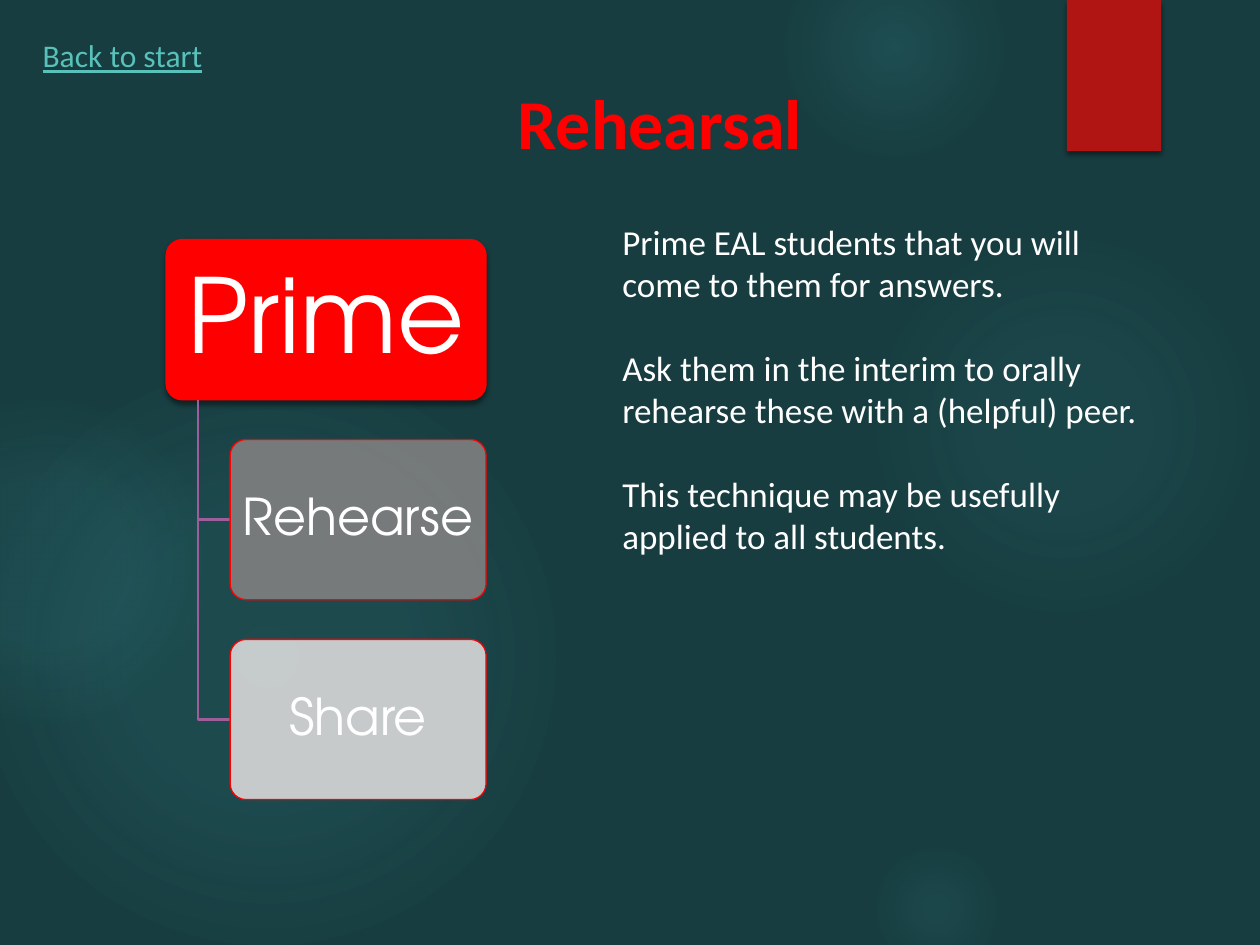
from dataclasses import dataclass

from lxml.etree import SubElement
from pptx import Presentation
from pptx.dml.color import RGBColor
from pptx.enum.shapes import MSO_SHAPE
from pptx.enum.text import MSO_ANCHOR, MSO_AUTO_SIZE, PP_ALIGN
from pptx.oxml import parse_xml
from pptx.oxml.ns import nsdecls, qn
from pptx.util import Cm, Pt

HUES = {
    "back": "173D40", "glow": "50B9C1", "tab": "B01513", "red": "FF0000",
    "white": "FFFFFF", "link": "58C1BA", "stem": "9E5E9B",
    "grey": "808080", "pale": "D9D9D9", "black": "000000",
}
BODY = [
    "Prime EAL students that you will come to them for answers.",
    "Ask them in the interim to orally rehearse these with a (helpful) peer.",
    "This technique may be usefully applied to all students.",
]


@dataclass
class Glow:
    left: float
    top: float
    size: float
    stops: tuple  # (position, opacity) in percent


@dataclass
class Step:
    text: str
    fill: str
    size: int
    alpha: int = 100
    raised: bool = False


GLOWS = [
    Glow(17.5, 4.65, 7.82, ((0, 7), (36, 6), (69, 0))),
    Glow(15.8, -1.27, 4.45, ((0, 14), (36, 7), (73, 0))),
    Glow(17.5, 16.94, 2.74, ((0, 9), (36, 5), (66, 0))),
    Glow(-0.43, 7.42, 11.63, ((0, 11), (36, 10), (75, 0))),
    Glow(-2.34, 8.05, 6.55, ((0, 8), (36, 8), (72, 0))),
]
STEPS = [Step("Prime", "red", 59, raised=True), Step("Rehearse", "grey", 29, 90),
         Step("Share", "pale", 29, 90)]

# Step chart grid, in cm
LEFT, TOP, WIDE, HIGH, PITCH = 3.35, 4.83, 6.45, 3.23, 4.03
INDENT, STEM = WIDE / 5, LEFT + WIDE / 10


def hue(name: str) -> RGBColor:
    return RGBColor.from_string(HUES[name])


def place(shape, left: float, top: float, wide: float, high: float) -> None:
    spots = {"left": left, "top": top, "width": wide, "height": high}
    for key, val in spots.items():
        setattr(shape, key, Cm(val))


def style(para, color: str, **form) -> None:
    for key, val in form.items():
        setattr(para.font, key, val)
    para.font.color.rgb = hue(color)


def block(slide, kind, box: tuple, fill: str):
    shape = slide.shapes.add_shape(kind, *map(Cm, box))
    shape.shadow.inherit = False
    shape.fill.solid()
    shape.fill.fore_color.rgb = hue(fill)
    shape.line.fill.background()
    return shape


def shade(shape) -> None:
    effects = shape.element.spPr.find(qn("a:effectLst"))
    cast = SubElement(effects, qn("a:outerShdw"), blurRad=str(Pt(3)),
                      dist=str(Pt(2)), dir="5400000", rotWithShape="0")
    tint = SubElement(cast, qn("a:srgbClr"), val=HUES["black"])
    SubElement(tint, qn("a:alpha"), val="45000")


def draw_glow(slide, glow: Glow) -> None:
    box = (glow.left, glow.top, glow.size, glow.size)
    shape = block(slide, MSO_SHAPE.OVAL, box, "glow")
    stops = "".join(
        f'<a:gs pos="{pos * 1000}"><a:srgbClr val="{HUES["glow"]}">'
        f'<a:alpha val="{alpha * 1000}"/></a:srgbClr></a:gs>'
        for pos, alpha in glow.stops)
    grad = parse_xml(
        f'<a:gradFill {nsdecls("a")} rotWithShape="1"><a:gsLst>{stops}</a:gsLst>'
        '<a:path path="circle"><a:fillToRect l="50000" t="50000" r="50000" '
        'b="50000"/></a:path></a:gradFill>')
    props = shape.element.spPr
    props.replace(props.find(qn("a:solidFill")), grad)


def draw_stem(slide, row: int) -> None:
    mid = TOP + row * PITCH + HIGH / 2
    pen = slide.shapes.build_freeform(Cm(STEM), Cm(TOP + HIGH))
    pen.add_line_segments([(Cm(STEM), Cm(mid)), (Cm(LEFT + INDENT), Cm(mid))],
                          close=False)
    stem = pen.convert_to_shape()
    stem.shadow.inherit = False
    stem.fill.background()
    stem.line.color.rgb = hue("stem")
    stem.line.width = Pt(1.5)


def draw_step(slide, row: int, step: Step) -> None:
    shift = INDENT if row else 0
    box = (LEFT + shift, TOP + row * PITCH, WIDE - shift, HIGH)
    shape = block(slide, MSO_SHAPE.ROUNDED_RECTANGLE, box, step.fill)
    shape.adjustments[0] = 0.1
    shape.line.color.rgb = hue("red")
    shape.line.width = Pt(0.75)
    if step.raised:
        shade(shape)
    if step.alpha < 100:
        tint = shape.element.spPr.find(qn("a:solidFill"))[0]
        SubElement(tint, qn("a:alpha"), val=str(step.alpha * 1000))
    frame = shape.text_frame
    frame.word_wrap = True
    frame.vertical_anchor = MSO_ANCHOR.MIDDLE
    for side in ("left", "right", "top", "bottom"):
        setattr(frame, f"margin_{side}", Cm(0.1))
    para = frame.paragraphs[0]
    para.text = step.text
    para.alignment = PP_ALIGN.CENTER
    para.line_spacing = 0.9
    style(para, "white", name="TeX Gyre Adventor", size=Pt(step.size))


def fill_text(shape, lines: list, color: str, align=PP_ALIGN.LEFT, **form) -> None:
    frame = shape.text_frame
    frame.word_wrap = True
    frame.auto_size = MSO_AUTO_SIZE.NONE
    frame.vertical_anchor = MSO_ANCHOR.TOP
    for num, line in enumerate(lines):
        para = frame.add_paragraph() if num else frame.paragraphs[0]
        para.text = line
        para.alignment = align
        para.space_before = Pt(24 if num else 0)
        props = para._p.get_or_add_pPr()
        props.set("marL", "0")
        props.set("indent", "0")
        SubElement(props, qn("a:buNone"))
        style(para, color, name="Calibri", **form)


def main() -> None:
    deck = Presentation()
    deck.slide_width, deck.slide_height = Cm(25.4), Cm(19.05)
    slide = deck.slides.add_slide(deck.slide_layouts[1])
    slide.background.fill.solid()
    slide.background.fill.fore_color.rgb = hue("back")

    # Backdrop
    for glow in GLOWS:
        draw_glow(slide, glow)
    shade(block(slide, MSO_SHAPE.RECTANGLE, (21.51, 0, 1.9, 3.05), "tab"))

    # Title and body, raised above the backdrop
    title, body = slide.shapes.title, slide.placeholders[1]
    for shape in (title, body):
        slide.shapes.element.append(shape.element)
    place(title, 2.29, 1.47, 22.02, 1.96)
    fill_text(title, ["Rehearsal"], "red", PP_ALIGN.CENTER, size=Pt(40), bold=True)
    place(body, 12.29, 4.32, 10.92, 7.09)
    fill_text(body, BODY, "white", size=Pt(20))

    # Way back
    back = slide.shapes.add_textbox(*map(Cm, (0.61, 0.61, 4.57, 1.02)))
    fill_text(back, ["Back to start"], "link", size=Pt(18), underline=True)

    # Step chart
    for row, step in enumerate(STEPS):
        if row:
            draw_stem(slide, row)
        draw_step(slide, row, step)

    deck.save("out.pptx")


if __name__ == "__main__":
    main()
